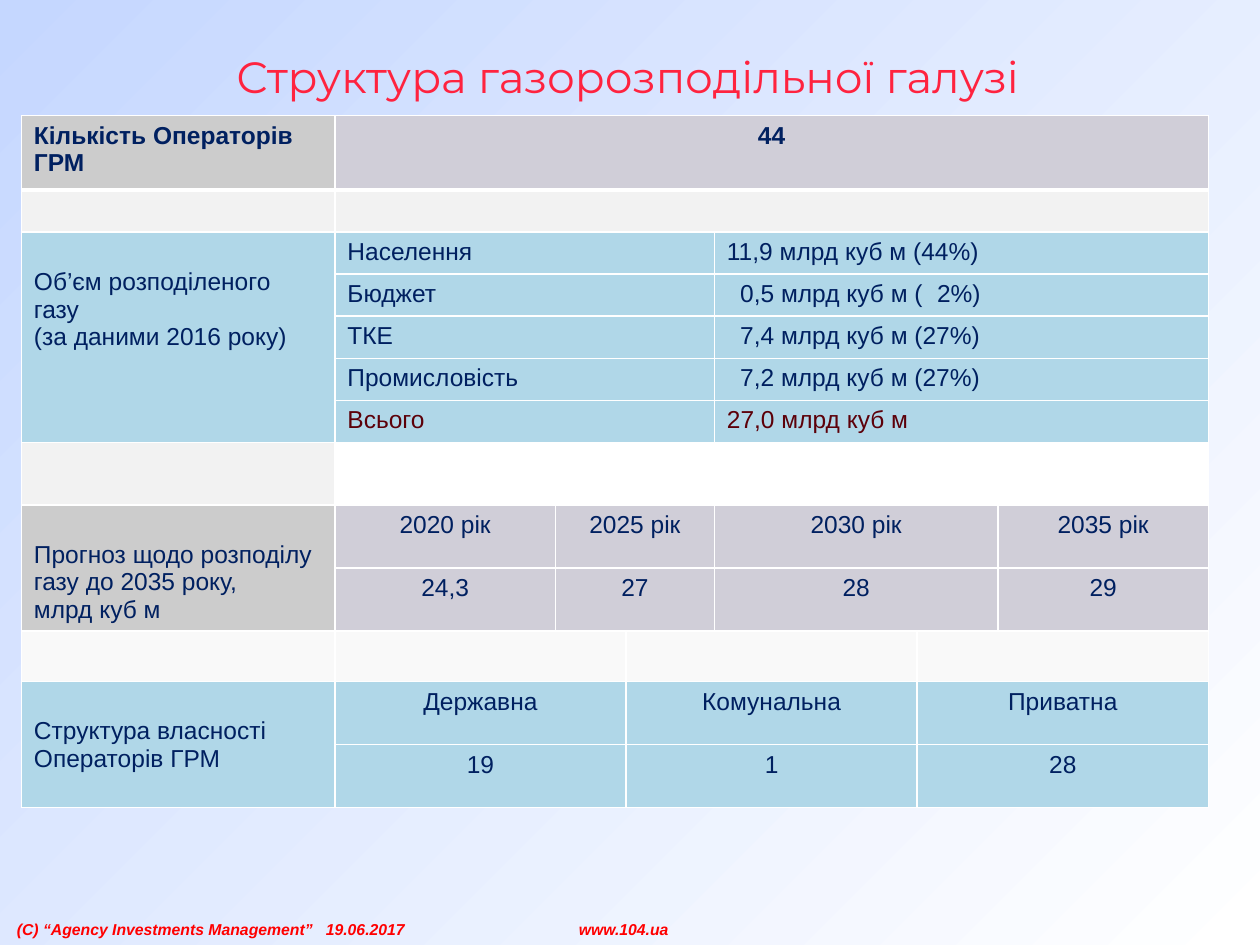
"""Build the slide on the structure of the gas distribution sector."""
from lxml import etree
from pptx import Presentation
from pptx import util as u
from pptx.dml import color
from pptx.enum import text
from pptx.oxml import ns

NAVY, RED, WINE, WHITE = "002060", "FF0000", "5C0009", "FFFFFF"
GREY, LILAC, BLUE, PALE, MIST = "CCCCCC", "D0CED8", "B0D7E8", "F2F2F2", "F9F9F9"
MID, LEFT = text.PP_ALIGN.CENTER, text.PP_ALIGN.LEFT
HALVES, YEARS, THIRDS = (3, 3), (1, 2, 2, 1), (2, 2, 2)
COLS = (6.32, 4.45, 1.42, 1.78, 4.09, 1.63, 4.24)
ROWS = [
    (1.5, GREY, LILAC, (6,), ["44"], MID),
    (0.84, PALE, PALE, (6,), [], MID),
    (0.82, BLUE, BLUE, HALVES, ["Населення", "11,9 млрд куб м (44%)"], LEFT),
    (0.82, BLUE, BLUE, HALVES, ["Бюджет", "0,5 млрд куб м (\t2%)"], LEFT),
    (0.82, BLUE, BLUE, HALVES, ["ТКЕ", "7,4 млрд куб м (27%)"], LEFT),
    (0.82, BLUE, BLUE, HALVES, ["Промисловість", "7,2 млрд куб м (27%)"], LEFT),
    (0.82, BLUE, BLUE, HALVES, ["Всього", "27,0 млрд куб м"], LEFT),
    (1.26, PALE, WHITE, HALVES, [], LEFT),
    (1.27, GREY, LILAC, YEARS, ["2020 рік", "2025 рік", "2030 рік", "2035 рік"], MID),
    (1.27, GREY, LILAC, YEARS, ["24,3", "27", "28", "29"], MID),
    (1.02, MIST, MIST, THIRDS, [], MID),
    (1.27, BLUE, BLUE, THIRDS, ["Державна", "Комунальна", "Приватна"], MID),
    (1.27, BLUE, BLUE, THIRDS, ["19", "1", "28"], MID),
]
LABELS = [
    (0, 0, ["Кількість Операторів ГРМ"]),
    (2, 6, ["Об’єм розподіленого газу", "(за даними 2016 року)"]),
    (8, 9, ["Прогноз щодо розподілу газу до 2035 року,", "млрд куб м"]),
    (11, 12, ["Структура власності Операторів ГРМ"]),
]


def rgb(code):
    return color.RGBColor.from_string(code)


def tabs(para, *stops):
    group = etree.SubElement(para._p.get_or_add_pPr(), ns.qn("a:tabLst"))
    for stop in stops:
        etree.SubElement(group, ns.qn("a:tab"), pos=str(u.Cm(stop)), algn="l")


class Deck:
    def __init__(self):
        self.prs = Presentation()
        self.prs.slide_width, self.prs.slide_height = u.Cm(25.4), u.Cm(19.05)
        self.slide = self.prs.slides.add_slide(self.prs.slide_layouts[5])

    def ground(self, start, end, angle):
        fill = self.slide.background.fill
        fill.gradient()
        fill.gradient_angle = angle
        for stop, code in zip(fill.gradient_stops, (start, end)):
            stop.color.rgb = rgb(code)

    def run(self, para, words, size=14, code=NAVY, bold=False, slant=False, face="Arial"):
        run = para.add_run()
        run.text = words
        font = run.font
        font.name, font.size, font.bold, font.italic = face, u.Pt(size), bold, slant
        font.color.rgb = rgb(code)

    def title(self, words, x, y, w, h):
        box = self.slide.shapes.title
        box.left, box.top, box.width, box.height = map(u.Cm, (x, y, w, h))
        frame = box.text_frame
        frame.vertical_anchor = text.MSO_ANCHOR.MIDDLE
        para = frame.paragraphs[0]
        para.alignment = MID
        self.run(para, words, 25, "FF233F", face="Montserrat")

    def footer(self, parts, stops, x, y, w, h):
        frame = self.slide.shapes.add_textbox(*map(u.Cm, (x, y, w, h))).text_frame
        frame.word_wrap = True
        frame.margin_left = u.Cm(0.34)
        para = frame.paragraphs[0]
        tabs(para, *stops)
        self.run(para, "\t".join(parts), 9, RED, True, True)

    def border(self, cell, top=1, foot=1):
        props = cell._tc.get_or_add_tcPr()
        for i, (side, width) in enumerate(zip("LRTB", (1, 1, top, foot))):
            line = etree.Element(ns.qn(f"a:ln{side}"), w=str(u.Pt(width)))
            fill = etree.SubElement(line, ns.qn("a:solidFill"))
            etree.SubElement(fill, ns.qn("a:srgbClr"), val=WHITE)
            props.insert(i, line)

    def grid(self, cols, rows, x, y):
        high = sum(row[0] for row in rows)
        size = map(u.Cm, (x, y, sum(cols), high))
        table = self.slide.shapes.add_table(len(rows), len(cols), *size).table
        table.first_row = table.horz_banding = False
        for col, width in zip(table.columns, cols):
            col.width = u.Cm(width)
        for r, (height, head, body, spans, words, align) in enumerate(rows):
            table.rows[r].height = u.Cm(height)
            for c in range(len(cols)):
                cell = table.cell(r, c)
                cell.fill.solid()
                cell.fill.fore_color.rgb = rgb(body if c else head)
                self.border(cell, 3 if r == 1 else 1, 3 if r == 0 else 1)
                end = etree.SubElement(cell.text_frame.paragraphs[0]._p, ns.qn("a:endParaRPr"))
                end.set("sz", "1400")
            c = 1
            for i, span in enumerate(spans):
                cell = table.cell(r, c)
                if span > 1:
                    cell.merge(table.cell(r, c + span - 1))
                if words:
                    self.entry(cell, words[i], align, r == 0, words[0] == "Всього")
                c += span
        return table

    def entry(self, cell, words, align, bold, total):
        para = cell.text_frame.paragraphs[0]
        para.alignment = align
        if "млрд" in words and words[1] == ",":
            cell.margin_left = u.Cm(0.52)
        if "\t" in words:
            tabs(para, 3.97)
        self.run(para, words, code=WINE if total else NAVY, bold=bold)

    def label(self, table, first, last, lines):
        cell = table.cell(first, 0)
        if last > first:
            cell.merge(table.cell(last, 0))
            cell.margin_top, cell.margin_bottom = u.Cm(0.73), 0
        frame = cell.text_frame
        for i, line in enumerate(lines):
            para = frame.add_paragraph() if i else frame.paragraphs[0]
            self.run(para, line, bold=first == 0)


def main():
    deck = Deck()
    deck.ground(WHITE, "C5D7FF", 135)
    deck.title("Структура газорозподільної галузі", 1.22, 0.64, 22.86, 1.8)
    deck.footer(["(C) “Agency Investments Management”", "19.06.2017", "www.104.ua"],
                (6.23, 11.33), 0, 18.42, 20.32, 0.64)
    table = deck.grid(COLS, ROWS, 0.43, 2.33)
    for label in LABELS:
        deck.label(table, *label)
    deck.prs.save("out.pptx")


if __name__ == "__main__":
    main()
